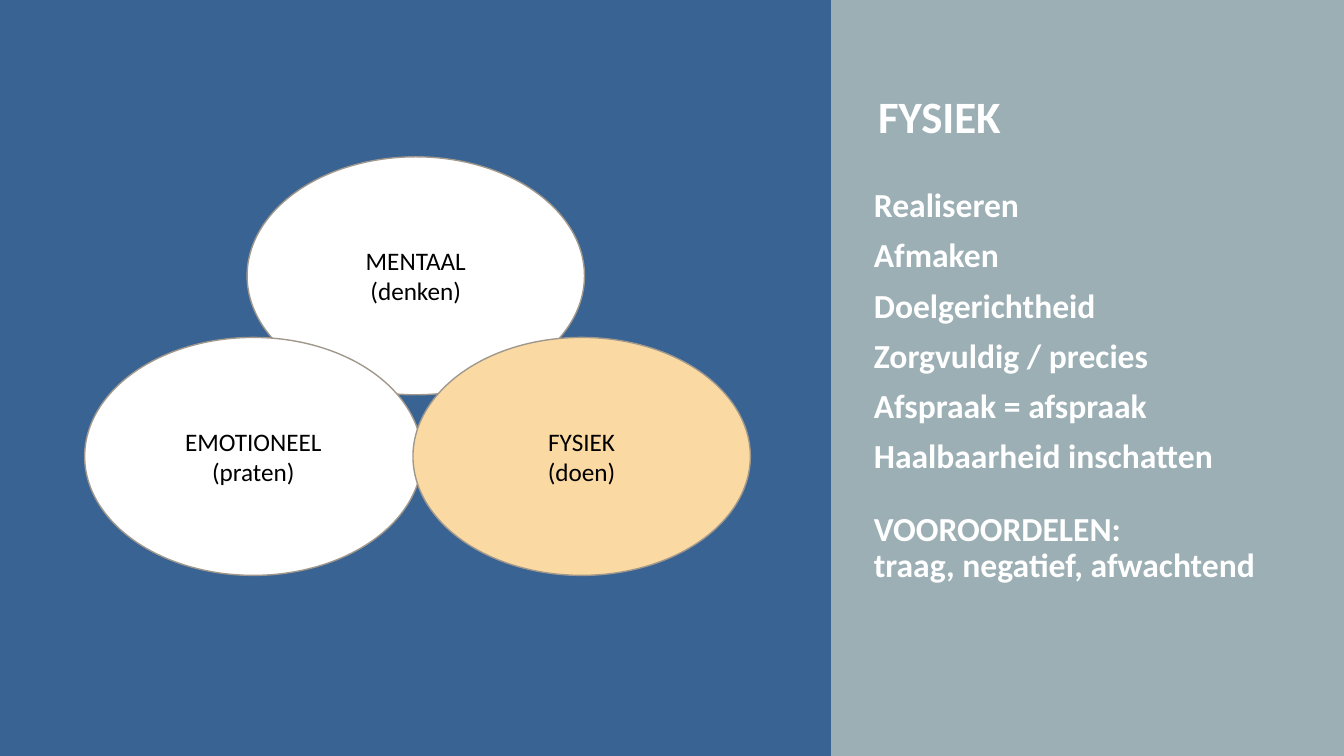
from dataclasses import dataclass

from lxml import etree
from pptx import Presentation
from pptx.dml.color import RGBColor
from pptx.enum import shapes, text
from pptx.oxml.ns import qn
from pptx.util import Pt


@dataclass(frozen=True)
class Theme:
    back: str = "9BAFB5"
    panel: str = "386393"
    plain: str = "FFFFFF"
    accent: str = "FBD9A3"
    edge: str = "A0988C"
    dark: str = "000000"
    light: str = "FFFFFF"
    font: str = "Calibri"
    head: int = 32
    body: int = 24
    label: int = 18


def rgb(code):
    return RGBColor.from_string(code)


class Page:
    def __init__(self, deck, theme):
        self.theme = theme
        self.slide = deck.slides.add_slide(deck.slide_layouts[1])
        fill = self.slide.background.fill
        fill.solid()
        fill.fore_color.rgb = rgb(theme.back)

    def style(self, para, size, color, bold, align):
        para.alignment = align
        for run in para.runs:
            font = run.font
            font.name, font.size, font.bold = self.theme.font, Pt(size), bold
            font.color.rgb = rgb(color)

    def place(self, holder, box):
        """Move a placeholder and start its text at the top."""
        holder.left, holder.top, holder.width, holder.height = map(Pt, box)
        frame = holder.text_frame
        frame.word_wrap = True
        frame.auto_size = text.MSO_AUTO_SIZE.NONE
        frame.vertical_anchor = text.MSO_ANCHOR.TOP
        return frame

    def shape(self, kind, box, fill, edge=None):
        item = self.slide.shapes.add_shape(kind, *map(Pt, box))
        item.shadow.inherit = False
        item.fill.solid()
        item.fill.fore_color.rgb = rgb(fill)
        if edge:
            item.line.color.rgb = rgb(edge)
            item.line.width = Pt(1)
        else:
            item.line.fill.background()
        return item

    def panel(self, box):
        self.shape(shapes.MSO_SHAPE.RECTANGLE, box, self.theme.panel)

    def oval(self, box, words, fill):
        item = self.shape(shapes.MSO_SHAPE.OVAL, box, fill, self.theme.edge)
        frame = item.text_frame
        frame.vertical_anchor = text.MSO_ANCHOR.MIDDLE
        para = frame.paragraphs[0]
        para.text = words
        self.style(para, self.theme.label, self.theme.dark, False,
                   text.PP_ALIGN.CENTER)

    def title(self, box, words):
        frame = self.place(self.slide.shapes.title, box)
        frame.text = words
        self.style(frame.paragraphs[0], self.theme.head, self.theme.light,
                   True, text.PP_ALIGN.LEFT)

    def items(self, box, rows):
        """Fill the body with (words, space before) rows, without bullets."""
        frame = self.place(self.slide.placeholders[1], box)
        for n, (words, gap) in enumerate(rows):
            para = frame.add_paragraph() if n else frame.paragraphs[0]
            para.text = words
            para.line_spacing = 0.9
            para.space_before = Pt(gap)
            self.style(para, self.theme.body, self.theme.light, True,
                       text.PP_ALIGN.LEFT)
            props = para._p.get_or_add_pPr()
            props.set("marL", "0")
            props.set("indent", "0")
            etree.SubElement(props, qn("a:buNone"))


def main():
    deck = Presentation()
    deck.slide_width, deck.slide_height = Pt(960), Pt(540)
    theme = Theme()
    page = Page(deck, theme)

    page.panel((0, 0, 593.5, 540))
    ovals = [
        (176.5, 112, "MENTAAL\n(denken)", theme.plain),
        (60.5, 241, "EMOTIONEEL\n(praten)", theme.plain),
        (295, 241, "FYSIEK\n(doen)", theme.accent),
    ]
    for left, top, words, fill in ovals:
        page.oval((left, top, 241, 170), words, fill)

    page.title((620, 60, 130, 46), "FYSIEK")
    traits = ["Realiseren", "Afmaken", "Doelgerichtheid",
              "Zorgvuldig / precies", "Afspraak = afspraak",
              "Haalbaarheid inschatten"]
    rows = [(words, 10 if n else 0) for n, words in enumerate(traits)]
    rows.append(("VOOROORDELEN:\ntraag, negatief, afwachtend", 26))
    page.items((617, 131, 340, 302), rows)

    deck.save("out.pptx")


if __name__ == "__main__":
    main()
